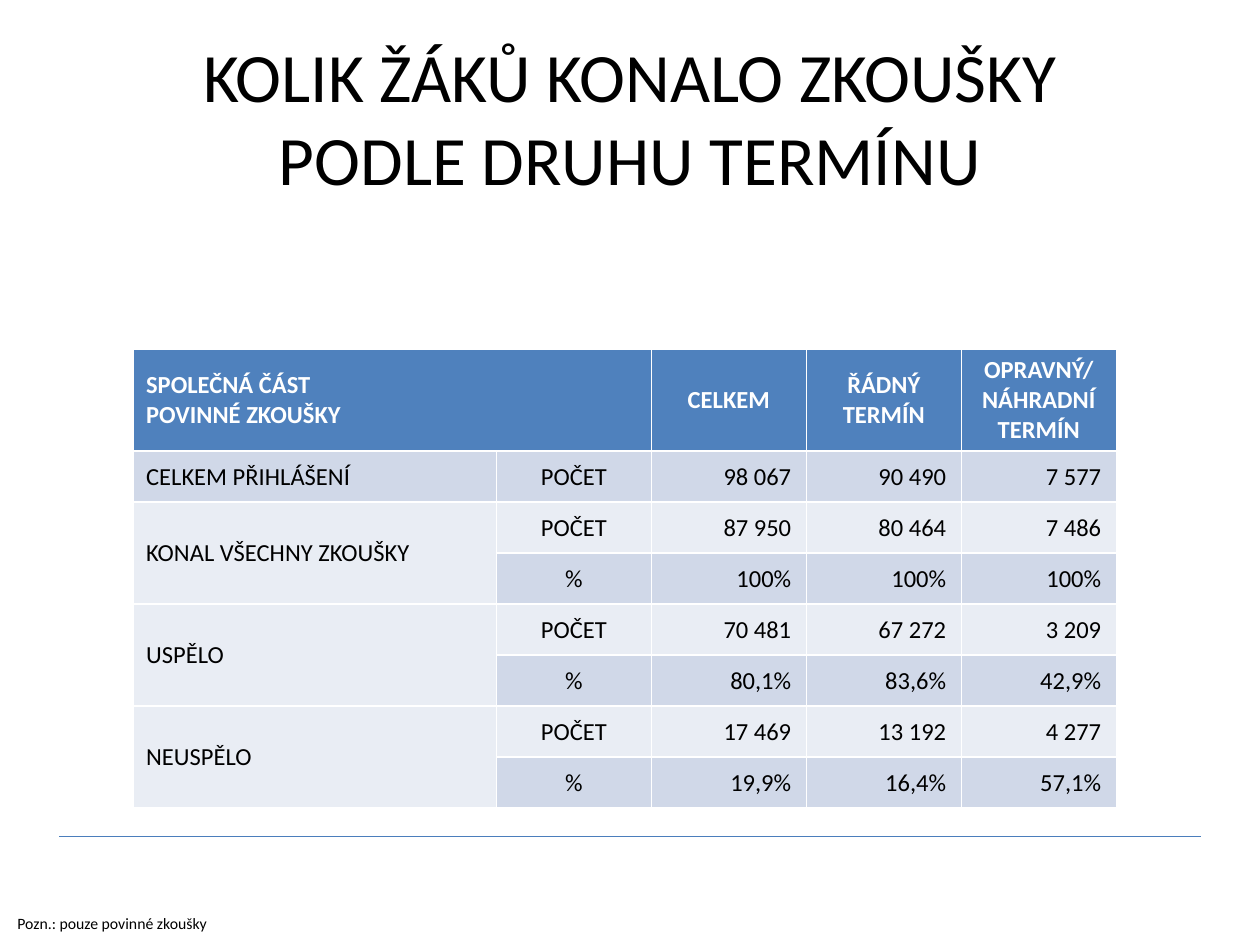
from dataclasses import dataclass

from lxml import etree
from pptx import Presentation
from pptx.dml.color import RGBColor
from pptx.enum import shapes, text
from pptx.oxml import ns
from pptx.util import Inches, Pt


@dataclass(frozen=True)
class Theme:
    font: str = "Calibri"
    ink: str = "000000"
    header_ink: str = "FFFFFF"
    header_fill: str = "4F81BD"
    bands: tuple = ("D0D8E8", "E9EDF4")
    rule: str = "4B7EBC"
    title_size: float = 39.6
    table_size: float = 14
    note_size: float = 9


THEME = Theme()
LEFT, CENTER, RIGHT = text.PP_ALIGN.LEFT, text.PP_ALIGN.CENTER, text.PP_ALIGN.RIGHT

HEADER = ["SPOLEČNÁ ČÁST\nPOVINNÉ ZKOUŠKY", "", "CELKEM", "ŘÁDNÝ TERMÍN",
          "OPRAVNÝ/ NÁHRADNÍ TERMÍN"]
RESULTS = [
    ["CELKEM PŘIHLÁŠENÍ", "POČET", "98 067", "90 490", "7 577"],
    ["KONAL VŠECHNY ZKOUŠKY", "POČET", "87 950", "80 464", "7 486"],
    ["", "%", "100%", "100%", "100%"],
    ["USPĚLO", "POČET", "70 481", "67 272", "3 209"],
    ["", "%", "80,1%", "83,6%", "42,9%"],
    ["NEUSPĚLO", "POČET", "17 469", "13 192", "4 277"],
    ["", "%", "19,9%", "16,4%", "57,1%"],
]
COLUMN_WIDTHS = [2.88] + [1.23] * 4
HEADER_HEIGHT, ROW_HEIGHT = 0.81, 0.405


def place(item, left, top, width, height):
    box = {"left": left, "top": top, "width": width, "height": height}
    for side, value in box.items():
        setattr(item, side, Inches(value))


def write(frame, content, size, color=THEME.ink, align=LEFT, bold=False):
    frame.text = content
    font_format = {"name": THEME.font, "size": Pt(size), "bold": bold}
    for paragraph in frame.paragraphs:
        paragraph.alignment = align
        for run in paragraph.runs:
            for name, value in font_format.items():
                setattr(run.font, name, value)
            run.font.color.rgb = RGBColor.from_string(color)


def add_title(slide, content):
    title = slide.shapes.title
    place(title, 0.5, 0.3, 9, 1.25)
    title.text_frame.auto_size = text.MSO_AUTO_SIZE.NONE
    title.text_frame.vertical_anchor = text.MSO_ANCHOR.MIDDLE
    write(title.text_frame, content, THEME.title_size, align=CENTER)


def add_rule(slide, left, right, y):
    rule = slide.shapes.add_connector(
        shapes.MSO_CONNECTOR.STRAIGHT, *map(Inches, (left, y, right, y)))
    rule.line.color.rgb = RGBColor.from_string(THEME.rule)
    rule.line.width = Pt(0.75)
    etree.SubElement(rule.element.spPr, ns.qn("a:effectLst"))


def fill_cell(cell, content, fill, **text_format):
    cell.fill.solid()
    cell.fill.fore_color.rgb = RGBColor.from_string(fill)
    cell.vertical_anchor = text.MSO_ANCHOR.MIDDLE
    write(cell.text_frame, content, THEME.table_size, **text_format)


def set_margins(cell, right):
    margins = {"left": 0.01, "top": 0.01, "right": right, "bottom": 0}
    for side, value in margins.items():
        setattr(cell, f"margin_{side}", Inches(value))


def add_results_table(slide, left, top):
    heights = [HEADER_HEIGHT] + [ROW_HEIGHT] * len(RESULTS)
    size = sum(COLUMN_WIDTHS), sum(heights)
    table = slide.shapes.add_table(
        len(heights), len(HEADER), *map(Inches, (left, top, *size))).table
    table.horz_banding = False
    for column, width in zip(table.columns, COLUMN_WIDTHS):
        column.width = Inches(width)
    for row, height in zip(table.rows, heights):
        row.height = Inches(height)

    for col, label in enumerate(HEADER):
        fill_cell(table.cell(0, col), label, THEME.header_fill, bold=True,
                  color=THEME.header_ink, align=LEFT if col < 2 else CENTER)
    for row, values in enumerate(RESULTS, start=1):
        band = THEME.bands[(row - 1) % 2]
        for col, value in enumerate(values):
            cell = table.cell(row, col)
            fill_cell(cell, value, band, align=(LEFT, CENTER, RIGHT)[min(col, 2)])
            if col:
                set_margins(cell, right=0.01 if col == 1 else 0.12)

    table.cell(0, 0).merge(table.cell(0, 1))
    for row in range(2, len(heights), 2):
        table.cell(row, 0).merge(table.cell(row + 1, 0))


def add_note(slide, content):
    note = slide.shapes.add_textbox(*map(Inches, (0.04, 7.2, 9.96, 0.25)))
    note.text_frame.word_wrap = True
    note.text_frame.auto_size = text.MSO_AUTO_SIZE.SHAPE_TO_FIT_TEXT
    write(note.text_frame, content, THEME.note_size)


def main():
    deck = Presentation()
    deck.slide_width, deck.slide_height = Inches(10), Inches(7.5)
    title_only = deck.slide_layouts[5]
    slide = deck.slides.add_slide(title_only)
    add_rule(slide, 0.47, 9.53, 6.64)
    add_title(slide, "KOLIK ŽÁKŮ KONALO ZKOUŠKY\vPODLE DRUHU TERMÍNU")
    add_results_table(slide, 1.06, 2.77)
    add_note(slide, "Pozn.: pouze povinné zkoušky")
    deck.save("out.pptx")


if __name__ == "__main__":
    main()
